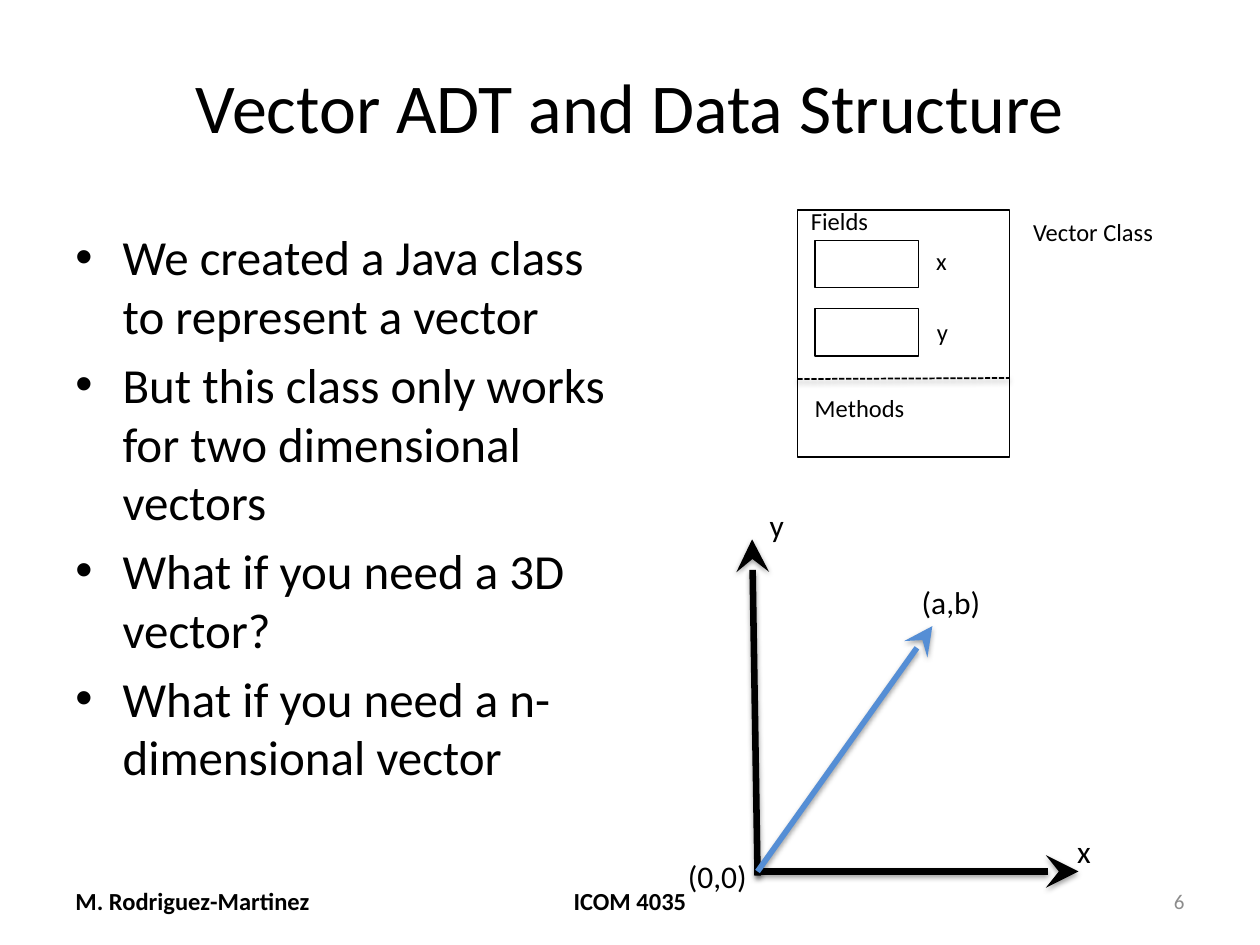
"""Build the slide on the Vector ADT: class diagram, axes and questions."""
from lxml.etree import SubElement
from pptx import Presentation
from pptx.dml.color import RGBColor
from pptx.enum.dml import MSO_LINE
from pptx.enum.shapes import MSO_CONNECTOR, MSO_SHAPE
from pptx.enum.text import MSO_ANCHOR as Anchor, PP_ALIGN as Align
from pptx.oxml.ns import qn
from pptx.util import Pt

BLACK = RGBColor(0, 0, 0)
WHITE = RGBColor(255, 255, 255)
GREY = RGBColor(0x8C, 0x8C, 0x8C)
BLUE = RGBColor(0x55, 0x8E, 0xD5)

HEADING = "Vector ADT and Data Structure"
QUESTIONS = [
    "We created a Java class to represent a vector",
    "But this class only works for two dimensional vectors",
    "What if you need a 3D vector?",
    "What if you need a n-dimensional vector",
]
MARGIN, FOOTER_TOP, FOOTER_HEIGHT = 36, 500.5, 28.75
FOOTER = [
    ("M. Rodriguez-Martinez", MARGIN, 168, Align.LEFT, {"size": Pt(14), "bold": True}),
    ("ICOM 4035", 246, 228, Align.CENTER, {"size": Pt(14), "bold": True}),
    ("6", 516, 168, Align.RIGHT, {"size": Pt(12), "color": GREY}),
]
CLASS_BOX = (455.75, 120, 121, 141.25)
FIELD_BOXES = [(465.75, top, 59, 27.25) for top in (137.25, 176.25)]
CLASS_LABELS = [
    ("Fields", 456.3, 114, 47.5),
    ("x", 527.9, 136.9, 21),
    ("y", 528.3, 177.4, 21),
    ("Methods", 458.5, 220.8, 66),
    ("Vector Class", 583.2, 120.2, 84),
]
PLOT_LABELS = [
    ("x", 608.4, 471.7, 22),
    ("y", 432.8, 285.4, 22),
    ("(0,0)", 386, 486.2, 48),
    ("(a,b)", 519.6, 329.8, 48),
]
ORIGIN = (432.9, 498)
ARROWS = [
    ((429.8, 308.2), (432.9, 500.4), BLACK, 3.75),
    ((616.3, 498), ORIGIN, BLACK, 3.75),
    ((532.8, 357.8), ORIGIN, BLUE, 3.25),
]
SHADOW = {"blurRad": Pt(3.1), "dist": Pt(1.6), "dir": 90 * 60000, "rotWithShape": 0}


def add_text(slide, lines, box, font=None, align=Align.LEFT, anchor=Anchor.TOP, wrap=True):
    frame = slide.shapes.add_textbox(*map(Pt, box)).text_frame
    frame.word_wrap, frame.vertical_anchor = wrap, anchor
    font_format = {"name": "Calibri", "size": Pt(14), "color": BLACK, **(font or {})}
    color = font_format.pop("color")
    for number, line in enumerate(lines):
        paragraph = frame.add_paragraph() if number else frame.paragraphs[0]
        paragraph.alignment = align
        run = paragraph.add_run()
        run.text = line
        run.font.color.rgb = color
        for key, value in font_format.items():
            setattr(run.font, key, value)
    return frame


def add_bullets(frame, indent, gap):
    for paragraph in frame.paragraphs:
        paragraph.space_before = Pt(gap)
        properties = paragraph._p.get_or_add_pPr()
        properties.set("marL", str(Pt(indent)))
        properties.set("indent", str(-Pt(indent)))
        SubElement(properties, qn("a:buFont"), typeface="Arial")
        SubElement(properties, qn("a:buChar"), char="•")


def add_box(slide, box):
    rectangle = slide.shapes.add_shape(MSO_SHAPE.RECTANGLE, *map(Pt, box))
    rectangle.shadow.inherit = False
    rectangle.fill.solid()
    rectangle.fill.fore_color.rgb = WHITE
    rectangle.line.color.rgb = BLACK
    rectangle.line.width = Pt(0.75)


def add_line(slide, start, end, color, width, arrow=True):
    connector = slide.shapes.add_connector(MSO_CONNECTOR.STRAIGHT, *map(Pt, start + end))
    connector.line.color.rgb = color
    connector.line.width = Pt(width)
    if arrow:
        SubElement(connector.line._ln, qn("a:headEnd"), type="stealth", w="lg", len="lg")
    else:
        connector.line.dash_style = MSO_LINE.SQUARE_DOT
    effects = SubElement(connector._element.spPr, qn("a:effectLst"))
    shadow = SubElement(effects, qn("a:outerShdw"),
                        {key: str(value) for key, value in SHADOW.items()})
    shade = SubElement(shadow, qn("a:srgbClr"), val=str(BLACK))
    SubElement(shade, qn("a:alpha"), val="38000")


def main():
    deck = Presentation()
    deck.slide_width, deck.slide_height = Pt(720), Pt(540)
    slide = deck.slides.add_slide(deck.slide_layouts[6])

    add_text(slide, [HEADING], (MARGIN, 21.6, 648, 77), {"size": Pt(40)},
             Align.CENTER, Anchor.MIDDLE)
    questions = add_text(slide, QUESTIONS, (MARGIN, 126, 318, 356.4), {"size": Pt(28)})
    add_bullets(questions, 27, 5.6)
    for text, left, width, align, font in FOOTER:
        add_text(slide, [text], (left, FOOTER_TOP, width, FOOTER_HEIGHT),
                 font, align, Anchor.MIDDLE)

    for box in [CLASS_BOX] + FIELD_BOXES:
        add_box(slide, box)
    left, _, width, _ = CLASS_BOX
    add_line(slide, (left, 216.6), (left + width, 216), BLACK, 1, arrow=False)
    for arrow in ARROWS:
        add_line(slide, *arrow)

    for labels, size, height in ((CLASS_LABELS, 14, 24.25), (PLOT_LABELS, 18, 29)):
        for text, left, top, width in labels:
            add_text(slide, [text], (left, top, width, height), {"size": Pt(size)}, wrap=False)
    deck.save("out.pptx")


if __name__ == "__main__":
    main()
